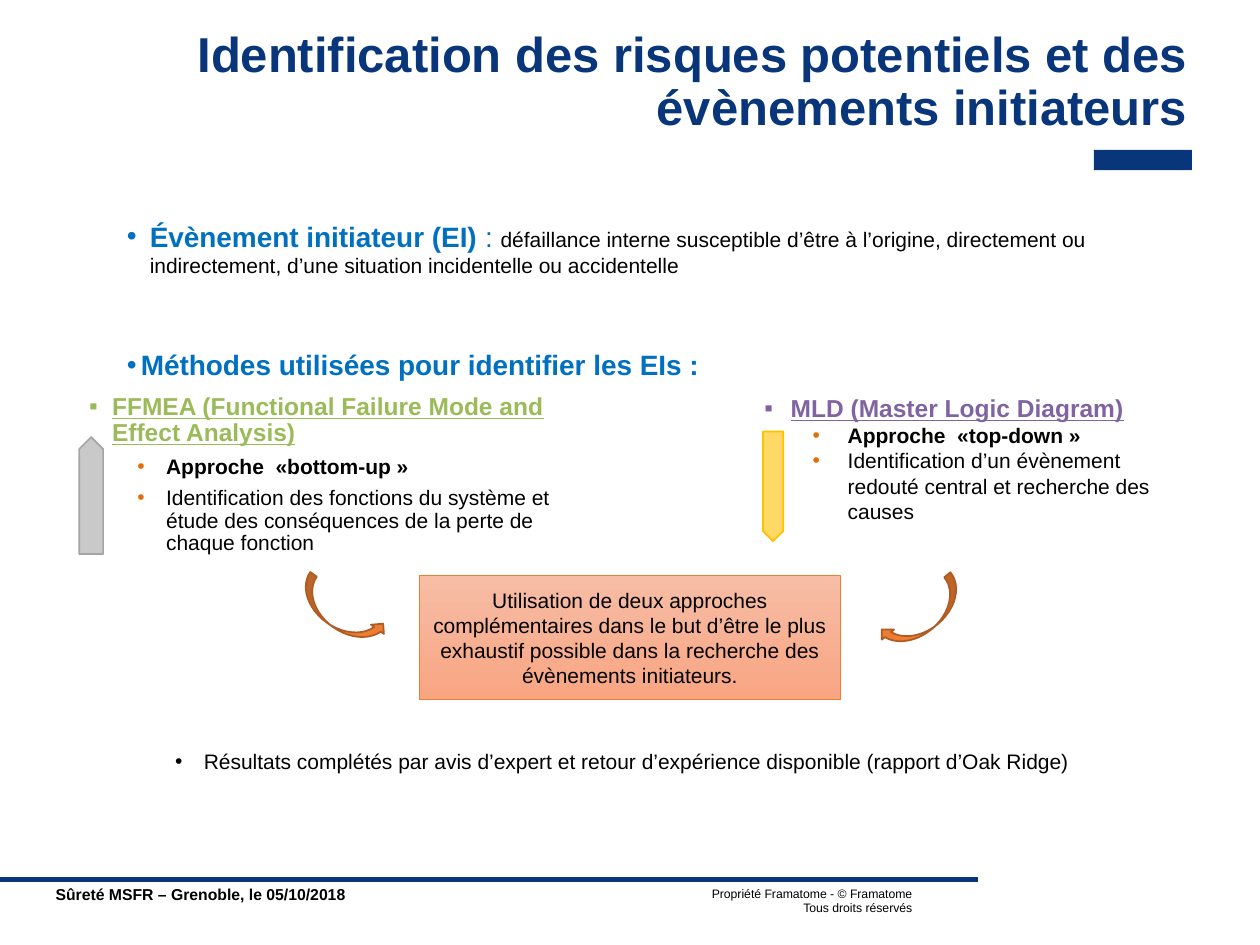
import pptx
import pptx.util
import pptx.dml.color
import pptx.enum.shapes
import pptx.enum.text
import pptx.oxml.ns
import lxml.etree

Cm = pptx.util.Cm
Pt = pptx.util.Pt
Kind = pptx.enum.shapes.MSO_SHAPE
Align = pptx.enum.text.PP_ALIGN
Anchor = pptx.enum.text.MSO_ANCHOR
qn = pptx.oxml.ns.qn

NAVY, BLUE, BLACK = "09357A", "0070C0", "000000"
GREEN, PURPLE, RUST = "9BBB59", "8064A2", "E46C0A"


def color(code):
    return pptx.dml.color.RGBColor.from_string(code)


class Deck:
    face = "Arial"

    def __init__(self, wide, high):
        self.file = pptx.Presentation()
        self.file.slide_width = Cm(wide)
        self.file.slide_height = Cm(high)
        self.slide = self.file.slides.add_slide(self.file.slide_layouts[6])

    def style(self, run, size, code=BLACK, bold=False, under=False):
        font = run.font
        font.name = self.face
        font.size = Pt(size)
        font.color.rgb = color(code)
        font.bold = bold
        font.underline = under

    def bullet(self, para, mark, left, hang, tint):
        props = para._p.get_or_add_pPr()
        props.set("marL", str(Cm(left)))
        props.set("indent", str(-Cm(hang)))
        if tint:
            shade = lxml.etree.SubElement(props, qn("a:buClr"))
            lxml.etree.SubElement(shade, qn("a:srgbClr"), val=tint)
        lxml.etree.SubElement(props, qn("a:buFont"), typeface=self.face)
        lxml.etree.SubElement(props, qn("a:buChar"), char=mark)

    def text(self, box, pad=(0.25, 0.13), anchor=Anchor.TOP):
        frame = self.slide.shapes.add_textbox(*map(Cm, box)).text_frame
        frame.word_wrap = True
        frame.vertical_anchor = anchor
        frame.margin_left = frame.margin_right = Cm(pad[0])
        frame.margin_top = frame.margin_bottom = Cm(pad[1])
        return frame

    def para(self, frame, words, size, code=BLACK, bold=False, under=False,
             mark=None, left=0, hang=0, tint=None, align=None, line=None, gap=0):
        para = frame.paragraphs[0]
        if para.runs:
            para = frame.add_paragraph()
            para.space_before = Pt(gap)
        para.text = words
        if mark:
            self.bullet(para, mark, left, hang, tint)
        if align is not None:
            para.alignment = align
        if line:
            para.line_spacing = line
        for run in para.runs:
            self.style(run, size, code, bold, under)
        return para

    def more(self, para, words, size, code=BLACK):
        run = para.add_run()
        run.text = words
        self.style(run, size, code)

    def shape(self, kind, box, fill, edge=None, width=1, turn=0, flip=False):
        shape = self.slide.shapes.add_shape(kind, *map(Cm, box))
        shape.shadow.inherit = False
        if isinstance(fill, tuple):
            shape.fill.gradient()
            shape.fill.gradient_angle = 270
            for spot, (stop, code) in enumerate(zip(shape.fill.gradient_stops, fill)):
                stop.position = spot
                stop.color.rgb = color(code)
        else:
            shape.fill.solid()
            shape.fill.fore_color.rgb = color(fill)
        if edge:
            shape.line.color.rgb = color(edge)
            shape.line.width = Pt(width)
        else:
            shape.line.fill.background()
        shape.rotation = turn
        if flip:
            shape._element.spPr.xfrm.set("flipH", "1")
        return shape

    def rule(self, left, right, top, code, width):
        rule = self.slide.shapes.add_connector(
            pptx.enum.shapes.MSO_CONNECTOR.STRAIGHT,
            Cm(left), Cm(top), Cm(right), Cm(top))
        rule.line.color.rgb = color(code)
        rule.line.width = Pt(width)
        lxml.etree.SubElement(rule._element.spPr, qn("a:effectLst"))

    def method(self, box, pad, title, code, lead, points, left, hang, line=None, gap=0):
        frame = self.text(box, pad)
        self.para(frame, title, 14, code, True, True, "▪", lead, lead, line=line)
        for spot, words in enumerate(points):
            self.para(frame, words, 12, bold=spot == 0, mark="•", left=left,
                      hang=hang, tint=RUST, line=line, gap=gap)


def main():
    deck = Deck(25.4, 19.05)

    title = deck.text((1.27, 0.46, 22.86, 2.39), (0.2, 0.1), Anchor.BOTTOM)
    deck.para(title, "Identification des risques potentiels et des évènements initiateurs",
              28, NAVY, True, align=Align.RIGHT, line=0.9)
    deck.shape(Kind.RECTANGLE, (22.05, 3.02, 1.98, 0.41), NAVY)

    event = deck.text((2.31, 4.29, 20.8, 1.6))
    para = deck.para(event, "Évènement initiateur (EI) ", 16, BLUE, True,
                     mark="•", left=0.46, hang=0.46)
    deck.more(para, ": ", 16, BLUE)
    deck.more(para, "défaillance interne susceptible d’être à l’origine, directement ou "
              "indirectement, d’une situation incidentelle ou accidentelle", 12)
    deck.para(deck.text((2.31, 6.88, 20.8, 0.9)),
              "Méthodes utilisées pour identifier les EIs :", 16, BLUE, True,
              mark="•", left=0.28, hang=0.28)
    deck.para(deck.text((2.31, 14.96, 20.8, 0.75)),
              "Résultats complétés par avis d’expert et retour d’expérience disponible "
              "(rapport d’Oak Ridge)", 12, mark="•", left=1.55, hang=0.58)

    deck.method((1.6, 7.85, 9.75, 3.33), (0.2, 0.1),
                "FFMEA (Functional Failure Mode and Effect Analysis)", GREEN, 0.46,
                ["Approche  «bottom-up »",
                 "Identification des fonctions du système et étude des conséquences "
                 "de la perte de chaque fonction"], 1.55, 0.58, 0.9, 5)
    deck.method((15.16, 7.8, 8.86, 2.9), (0.25, 0.13),
                "MLD (Master Logic Diagram)", PURPLE, 0.53,
                ["Approche  «top-down »",
                 "Identification d’un évènement redouté central et recherche des causes"],
                1.68, 0.71)

    for box, fill, edge, turn in (
            ((0.66, 9.75, 2.36, 0.48), "C9C9C9", "A5A5A5", 270),
            ((14.48, 9.6, 2.21, 0.41), "FFD966", "FFC000", 90)):
        arrow = deck.shape(Kind.RIGHT_ARROW, box, fill, edge, turn=turn)
        arrow.adjustments[0] = 1
        arrow.adjustments[1] = 0.5

    for left, top, turn, flip in ((18.29, 11.43, 50.2, False), (6.55, 11.38, 305.3, True)):
        deck.shape(Kind.CURVED_LEFT_ARROW, (left, top, 0.64, 1.96),
                   "ED7D31", "AF5C24", turn=turn, flip=flip)

    panel = deck.shape(Kind.RECTANGLE, (8.46, 11.61, 8.48, 2.49),
                       ("F7BDA5", "F8A582"), "ED7D31", 0.5).text_frame
    panel.word_wrap = True
    panel.vertical_anchor = Anchor.MIDDLE
    deck.para(panel, "Utilisation de deux approches complémentaires dans le but d’être le plus "
              "exhaustif possible dans la recherche des évènements initiateurs.",
              12, align=Align.CENTER)

    deck.rule(0, 19.71, 17.73, NAVY, 3)
    deck.para(deck.text((1.12, 17.83, 12.5, 0.58), (0, 0)),
              "Sûreté MSFR – Grenoble, le 05/10/2018", 9, bold=True)
    deck.para(deck.text((13.82, 17.86, 4.57, 0.79), (0, 0)),
              "Propriété Framatome - © Framatome\vTous droits réservés", 7, align=Align.RIGHT)

    deck.file.save("out.pptx")


if __name__ == "__main__":
    main()
